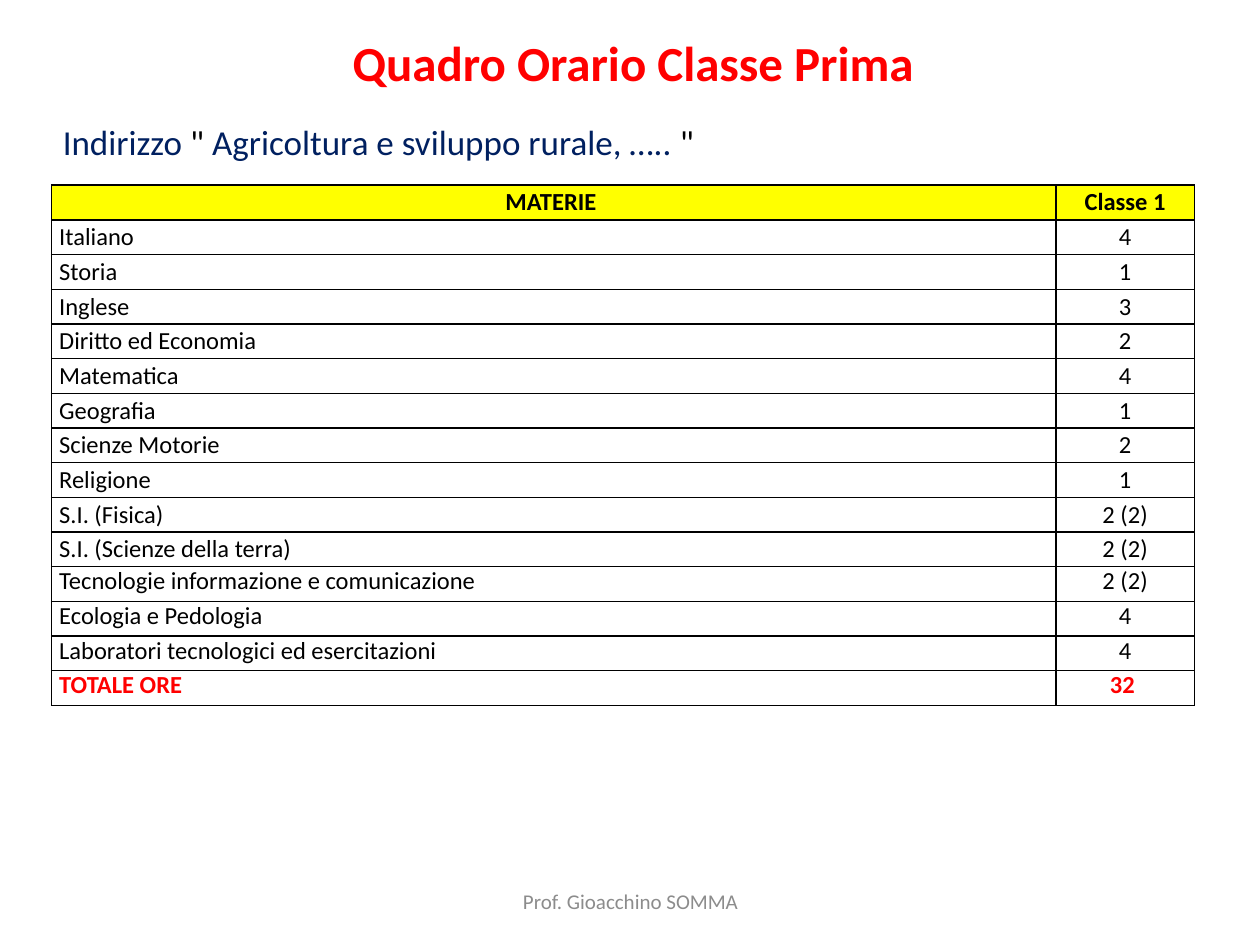
import pptx
import pptx.util
import pptx.dml.color
import pptx.enum.text
import pptx.oxml
import pptx.oxml.ns

Inches, Pt = pptx.util.Inches, pptx.util.Pt
RGBColor = pptx.dml.color.RGBColor
PP_ALIGN = pptx.enum.text.PP_ALIGN
MSO_ANCHOR = pptx.enum.text.MSO_ANCHOR

RED = RGBColor(0xFF, 0x00, 0x00)
NAVY = RGBColor(0x00, 0x20, 0x60)
BLACK = RGBColor(0x00, 0x00, 0x00)
GRAY = RGBColor(0x8C, 0x8C, 0x8C)
YELLOW = RGBColor(0xFF, 0xFF, 0x00)
FONT = "Calibri"

HEADING = "Quadro Orario Classe Prima"
COURSE = [
    ("Indirizzo ", NAVY),
    ('"', BLACK),
    (" Agricoltura e sviluppo rurale, ….. ", NAVY),
    ('"', BLACK),
]
TEACHER = "Prof. Gioacchino SOMMA"
TIMETABLE = [
    ("MATERIE ", "Classe 1"),
    ("Italiano", "4"),
    ("Storia", "1"),
    ("Inglese", "3"),
    ("Diritto ed Economia", "2"),
    ("Matematica", "4"),
    ("Geografia", "1"),
    ("Scienze Motorie", "2"),
    ("Religione", "1"),
    ("S.I. (Fisica)", "2 (2)"),
    ("S.I. (Scienze della terra)", "2 (2)"),
    ("Tecnologie informazione e comunicazione", "2 (2)"),
    ("Ecologia e Pedologia", "4"),
    ("Laboratori tecnologici ed esercitazioni", "4"),
    ("TOTALE ORE", "32 "),
]
COLUMN_WIDTHS = (7.97, 1.1)
TABLE_HEIGHT = 4.13
FIRST_TOP_ANCHORED_ROW = 11


def style_run(run, size, color, bold=False):
    run.font.name = FONT
    run.font.size = Pt(size)
    run.font.bold = bold
    run.font.color.rgb = color


def add_text(slide, left, top, width, height, pieces, size, align, anchor):
    box = slide.shapes.add_textbox(Inches(left), Inches(top), Inches(width), Inches(height))
    frame = box.text_frame
    frame.word_wrap = True
    frame.vertical_anchor = anchor
    paragraph = frame.paragraphs[0]
    paragraph.alignment = align
    for words, color in pieces:
        run = paragraph.add_run()
        run.text = words
        style_run(run, size, color)


def add_borders(cell):
    properties = cell._tc.get_or_add_tcPr()
    for position, side in enumerate(("lnL", "lnR", "lnT", "lnB")):
        properties.insert(position, pptx.oxml.parse_xml(
            f'<a:{side} {pptx.oxml.ns.nsdecls("a")} w="{Pt(1)}">'
            f'<a:solidFill><a:srgbClr val="{BLACK}"/></a:solidFill></a:{side}>'))


def fill_cell(cell, words, row, column):
    header, total = row == 0, row == len(TIMETABLE) - 1
    cell.margin_left = cell.margin_right = Inches(0.06)
    cell.margin_top = cell.margin_bottom = 0
    cell.vertical_anchor = MSO_ANCHOR.MIDDLE if row < FIRST_TOP_ANCHORED_ROW else MSO_ANCHOR.TOP
    if header:
        cell.fill.solid()
        cell.fill.fore_color.rgb = YELLOW
    else:
        cell.fill.background()
    cell.text_frame.text = words
    paragraph = cell.text_frame.paragraphs[0]
    paragraph.alignment = PP_ALIGN.CENTER if header or column == 1 else PP_ALIGN.LEFT
    style_run(paragraph.runs[0], 14, RED if total else BLACK, header or total)
    add_borders(cell)


def main():
    deck = pptx.Presentation()
    deck.slide_width, deck.slide_height = Inches(10), Inches(7.5)
    slide = deck.slides.add_slide(deck.slide_layouts[5])

    title = slide.shapes.title
    title.left, title.top = Inches(0.84), Inches(0.21)
    title.width, title.height = Inches(8.37), Inches(0.57)
    title.text_frame.text = HEADING
    title.text_frame.vertical_anchor = MSO_ANCHOR.TOP
    title.text_frame.paragraphs[0].alignment = PP_ALIGN.CENTER
    style_run(title.text_frame.paragraphs[0].runs[0], 28, RED, True)

    add_text(slide, 0.4, 0.91, 8.93, 0.44, COURSE, 20, PP_ALIGN.LEFT, MSO_ANCHOR.TOP)
    add_text(slide, 3.42, 6.95, 3.17, 0.4, [(TEACHER, GRAY)], 12,
             PP_ALIGN.CENTER, MSO_ANCHOR.MIDDLE)

    timetable = slide.shapes.add_table(
        len(TIMETABLE), len(COLUMN_WIDTHS), Inches(0.41), Inches(1.47),
        Inches(sum(COLUMN_WIDTHS)), Inches(TABLE_HEIGHT)).table
    timetable.horz_banding = False
    for column, width in enumerate(COLUMN_WIDTHS):
        timetable.columns[column].width = Inches(width)
    for row, entry in enumerate(TIMETABLE):
        for column, words in enumerate(entry):
            fill_cell(timetable.cell(row, column), words, row, column)

    deck.save("out.pptx")


if __name__ == "__main__":
    main()
